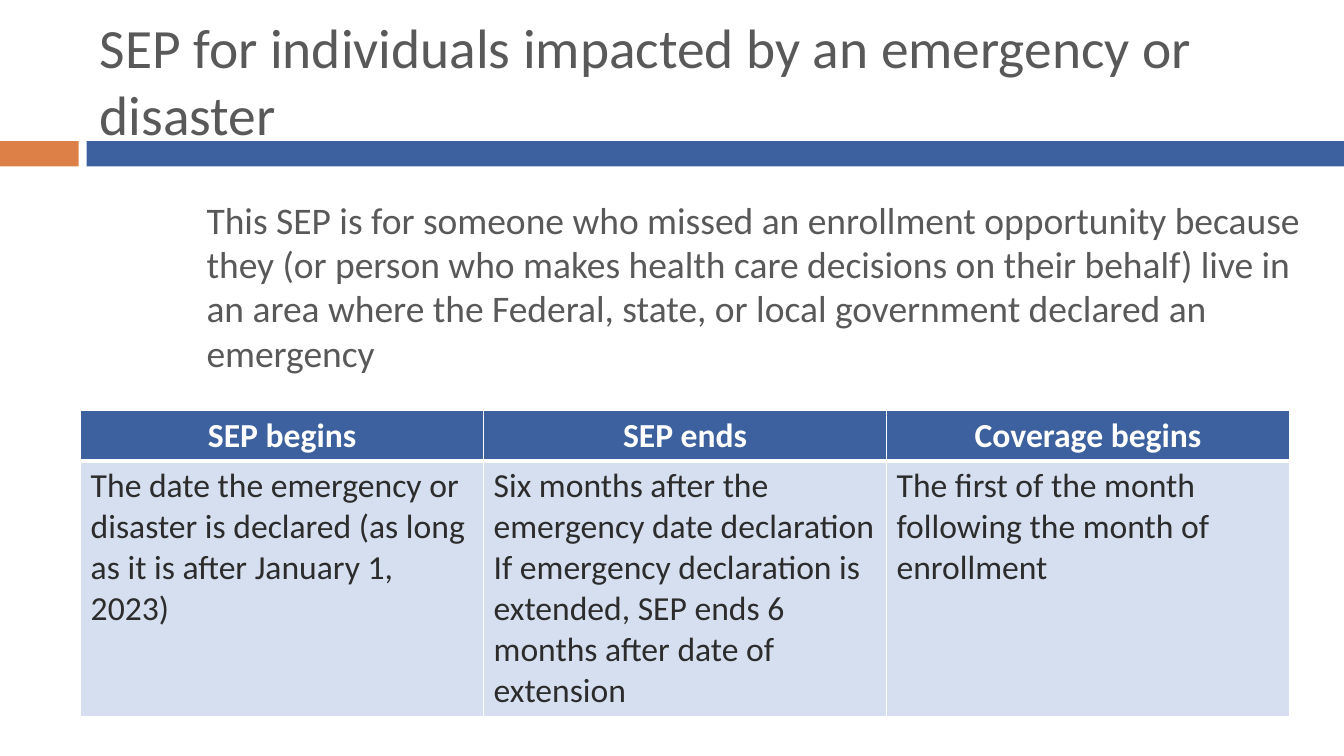
"""Build the slide on the emergency or disaster enrollment period."""
from typing import NamedTuple

from lxml import etree
from pptx import Presentation
from pptx import util as u
from pptx.dml.color import RGBColor
from pptx.enum import shapes, text
from pptx.oxml import ns

PX = 9144
BLUE, ORANGE, PALE = "3C619E", "DD8047", "D5DFEF"
WHITE, GREY, INK = "FFFFFF", "595959", "2C2C2C"


class Box(NamedTuple):
    left: int
    top: int
    width: int
    height: int


class Bar(NamedTuple):
    box: Box
    fill: str


class Label(NamedTuple):
    box: Box
    words: str
    size: float
    anchor: text.MSO_ANCHOR
    before: int
    pitch: float


class Row(NamedTuple):
    height: int
    cells: tuple[str, ...]
    fill: str
    ink: str
    bold: bool
    align: text.PP_ALIGN
    base: int


BARS = (
    Bar(Box(0, 140, 78, 25), ORANGE),
    Bar(Box(86, 140, 1247, 25), BLUE),
)
LABELS = (
    Label(Box(89, 25, 1189, 108),
          "SEP for individuals impacted by an emergency or disaster",
          39.6, text.MSO_ANCHOR.MIDDLE, 0, 1),
    Label(Box(195, 193, 1111, 172),
          "This SEP is for someone who missed an enrollment opportunity because "
          "they (or person who makes health care decisions on their behalf) live "
          "in an area where the Federal, state, or local government declared an "
          "emergency",
          26.8, text.MSO_ANCHOR.TOP, 7, 0.98),
)
GRID = Box(80, 407, 1199, 304)
ROWS = (
    Row(50, ("SEP begins", "SEP ends", "Coverage begins"),
        BLUE, WHITE, True, text.PP_ALIGN.CENTER, 3),
    Row(254, (
        "The date the emergency or disaster is declared (as long as it is after "
        "January 1, 2023)",
        "Six months after the emergency date declaration\n"
        "If emergency declaration is extended, SEP ends 6 months after date of "
        "extension",
        "The first of the month following the month of enrollment",
    ), PALE, INK, False, text.PP_ALIGN.LEFT, 1),
)


def rgb(code: str) -> RGBColor:
    """Turn a hex string into a colour."""
    return RGBColor.from_string(code)


def place(box: Box) -> list[u.Emu]:
    """Turn a box in px into EMU lengths."""
    return [u.Emu(side * PX) for side in box]


def style(frame, size: float, ink: str, bold: bool = False) -> None:
    """Format every run of a text frame."""
    for para in frame.paragraphs:
        for run in para.runs:
            font = run.font
            font.name, font.size, font.bold = "Calibri", u.Pt(size), bold
            font.color.rgb = rgb(ink)


def draw_bar(slide, bar: Bar) -> None:
    """Draw a plain filled bar."""
    shape = slide.shapes.add_shape(shapes.MSO_SHAPE.RECTANGLE, *place(bar.box))
    shape.shadow.inherit = False
    shape.fill.solid()
    shape.fill.fore_color.rgb = rgb(bar.fill)
    shape.line.fill.background()


def draw_label(slide, label: Label) -> None:
    """Draw a wrapped text box."""
    frame = slide.shapes.add_textbox(*place(label.box)).text_frame
    frame.word_wrap = True
    frame.vertical_anchor = label.anchor
    frame.text = label.words
    para = frame.paragraphs[0]
    para.space_before = u.Pt(label.before)
    para.line_spacing = label.pitch
    style(frame, label.size, GREY)


def edge(cell, base: int) -> None:
    """Give a cell white borders with the given bottom width."""
    props = cell._tc.get_or_add_tcPr()
    widths = {"lnL": 1, "lnR": 1, "lnT": 1, "lnB": base}
    for spot, (side, width) in enumerate(widths.items()):
        line = etree.Element(ns.qn(f"a:{side}"), w=str(u.Pt(width)))
        fill = etree.SubElement(line, ns.qn("a:solidFill"))
        etree.SubElement(fill, ns.qn("a:srgbClr"), val=WHITE)
        props.insert(spot, line)


def draw_grid(slide, box: Box, rows: tuple[Row, ...]) -> None:
    """Draw the table of dates."""
    count = len(rows[0].cells)
    table = slide.shapes.add_table(len(rows), count, *place(box)).table
    for i, row in enumerate(rows):
        table.rows[i].height = u.Emu(row.height * PX)
        for j, words in enumerate(row.cells):
            cell = table.cell(i, j)
            cell.text_frame.text = words
            for para in cell.text_frame.paragraphs:
                para.alignment = row.align
            style(cell.text_frame, 24, row.ink, row.bold)
            cell.fill.solid()
            cell.fill.fore_color.rgb = rgb(row.fill)
            edge(cell, row.base)


def main() -> None:
    """Build and save the deck."""
    deck = Presentation()
    deck.slide_width, deck.slide_height = u.Emu(1333 * PX), u.Emu(750 * PX)
    slide = deck.slides.add_slide(deck.slide_layouts[6])
    for bar in BARS:
        draw_bar(slide, bar)
    for label in LABELS:
        draw_label(slide, label)
    draw_grid(slide, GRID, ROWS)
    deck.save("out.pptx")


if __name__ == "__main__":
    main()
